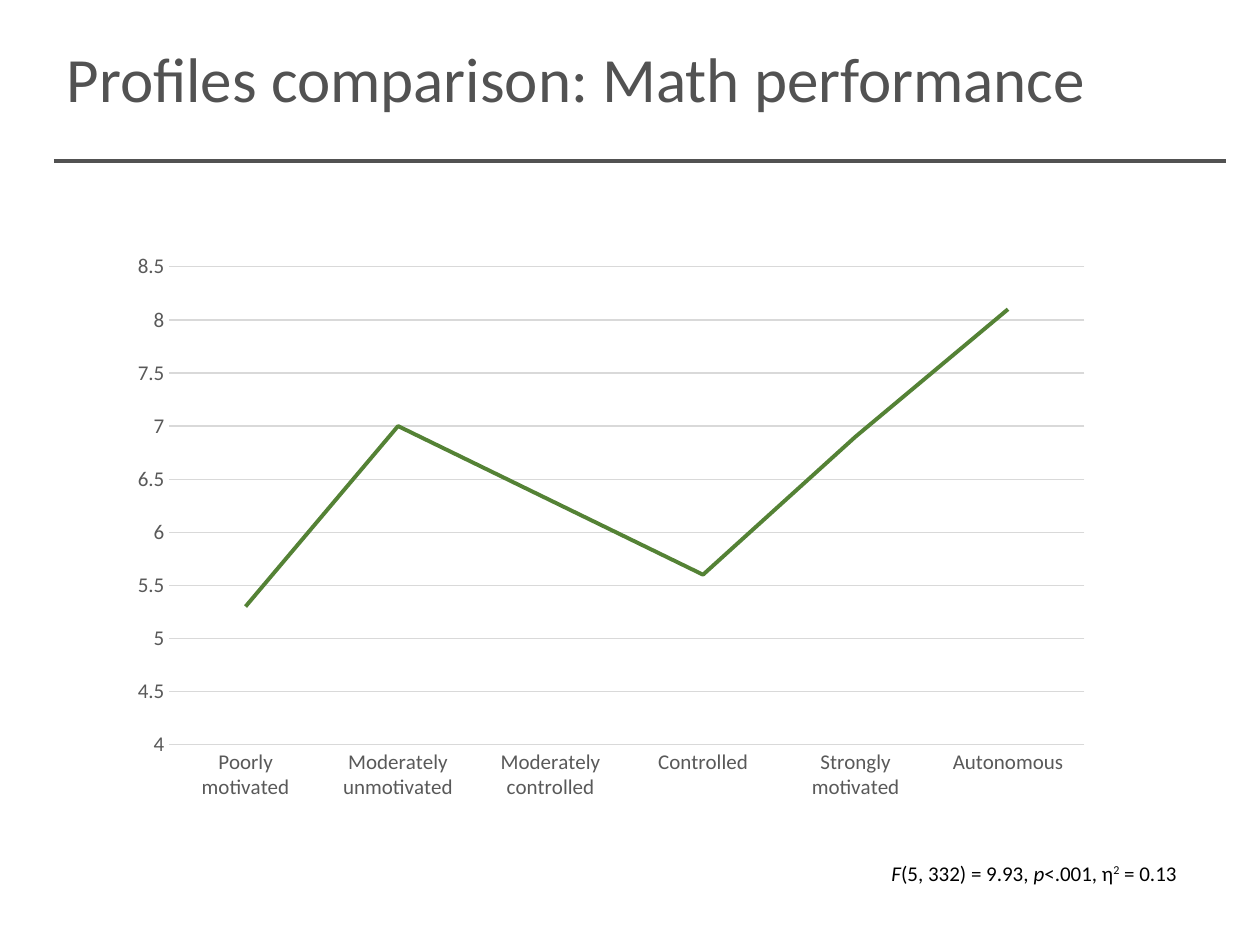
from dataclasses import dataclass

from pptx import Presentation
from pptx.chart.data import CategoryChartData as ChartData
from pptx.dml.color import RGBColor as Rgb
from pptx.enum.chart import XL_CHART_TYPE as Kind, XL_TICK_MARK as Tick
from pptx.enum.shapes import MSO_CONNECTOR as Link
from pptx.enum.text import MSO_ANCHOR as Anchor, MSO_AUTO_SIZE as Fit, PP_ALIGN as Align
from pptx.oxml.ns import qn
from pptx.util import Emu, Pt

SCALE = 914400 / 126
FONT = "Calibri"
HUES = {"title": "525252", "label": "595959", "grid": "D9D9D9",
        "line": "548235", "text": "000000"}


@dataclass
class Part:
    text: str
    italic: bool = False
    raised: bool = False


@dataclass
class Score:
    group: str
    mean: float


SCORES = [
    Score("Poorly motivated", 5.3),
    Score("Moderately unmotivated", 7),
    Score("Moderately controlled", 6.3),
    Score("Controlled", 5.6),
    Score("Strongly motivated", 6.9),
    Score("Autonomous", 8.1),
]
STATS = [
    Part("F", italic=True),
    Part("(5, 332) = 9.93, "),
    Part("p", italic=True),
    Part("<.001, η"),
    Part("2", raised=True),
    Part(" = 0.13"),
]


def px(count: int) -> Emu:
    return Emu(round(count * SCALE))


def style(font, size: int, hue: str) -> None:
    font.name, font.size = FONT, Pt(size)
    font.color.rgb = Rgb.from_string(HUES[hue])


def stroke(line, hue: str, width: float) -> None:
    line.color.rgb = Rgb.from_string(HUES[hue])
    line.width = Pt(width)


def write(shape, parts: list[Part], *, size: int, hue: str,
          anchor=Anchor.TOP, fit=Fit.NONE) -> None:
    frame = shape.text_frame
    frame.word_wrap, frame.auto_size = True, fit
    frame.vertical_anchor = anchor
    para = frame.paragraphs[0]
    para.alignment = Align.LEFT
    for part in parts:
        run = para.add_run()
        run.text = part.text
        style(run.font, size, hue)
        run.font.italic = part.italic
        if part.raised:
            run.font._element.set("baseline", "30000")


def plot(slide, scores: list[Score], box: list[int]) -> None:
    data = ChartData()
    data.categories = [score.group for score in scores]
    data.add_series("Series 1", [score.mean for score in scores])
    chart = slide.shapes.add_chart(Kind.LINE, *map(px, box), data).chart
    chart.has_title = chart.has_legend = False
    style(chart.font, 10, "text")

    # Axes and grid
    for axis in (chart.category_axis, chart.value_axis):
        axis.major_tick_mark = axis.minor_tick_mark = Tick.NONE
        style(axis.tick_labels.font, 12, "label")
    stroke(chart.category_axis.format.line, "grid", 0.75)
    rise = chart.value_axis
    rise.minimum_scale = 4
    rise.format.line.fill.background()
    rise.has_major_gridlines = True
    stroke(rise.major_gridlines.format.line, "grid", 0.75)

    # Mean score line
    chart.plots[0].vary_by_categories = False
    means = chart.plots[0].series[0]
    means.smooth = False
    stroke(means.format.line, "line", 2.25)


def main() -> None:
    deck = Presentation()
    deck.slide_width, deck.slide_height = px(1260), px(945)
    slide = deck.slides.add_slide(deck.slide_layouts[5])

    # Chart
    plot(slide, SCORES, [118, 243, 986, 568])

    # Title and rule
    title = slide.shapes.title
    title.left, title.top, title.width, title.height = map(px, (54, 14, 1192, 127))
    write(title, [Part("Profiles comparison: Math performance")],
          size=36, hue="title", anchor=Anchor.MIDDLE)
    rule = slide.shapes.add_connector(Link.STRAIGHT, *map(px, (54, 161, 1226, 161)))
    stroke(rule.line, "title", 2.25)
    props = rule._element.spPr
    props.append(props.makeelement(qn("a:effectLst"), {}))

    # Test statistics
    note = slide.shapes.add_textbox(*map(px, (879, 854, 447, 38)))
    write(note, STATS, size=12, hue="text", fit=Fit.SHAPE_TO_FIT_TEXT)

    deck.save("out.pptx")


if __name__ == "__main__":
    main()
